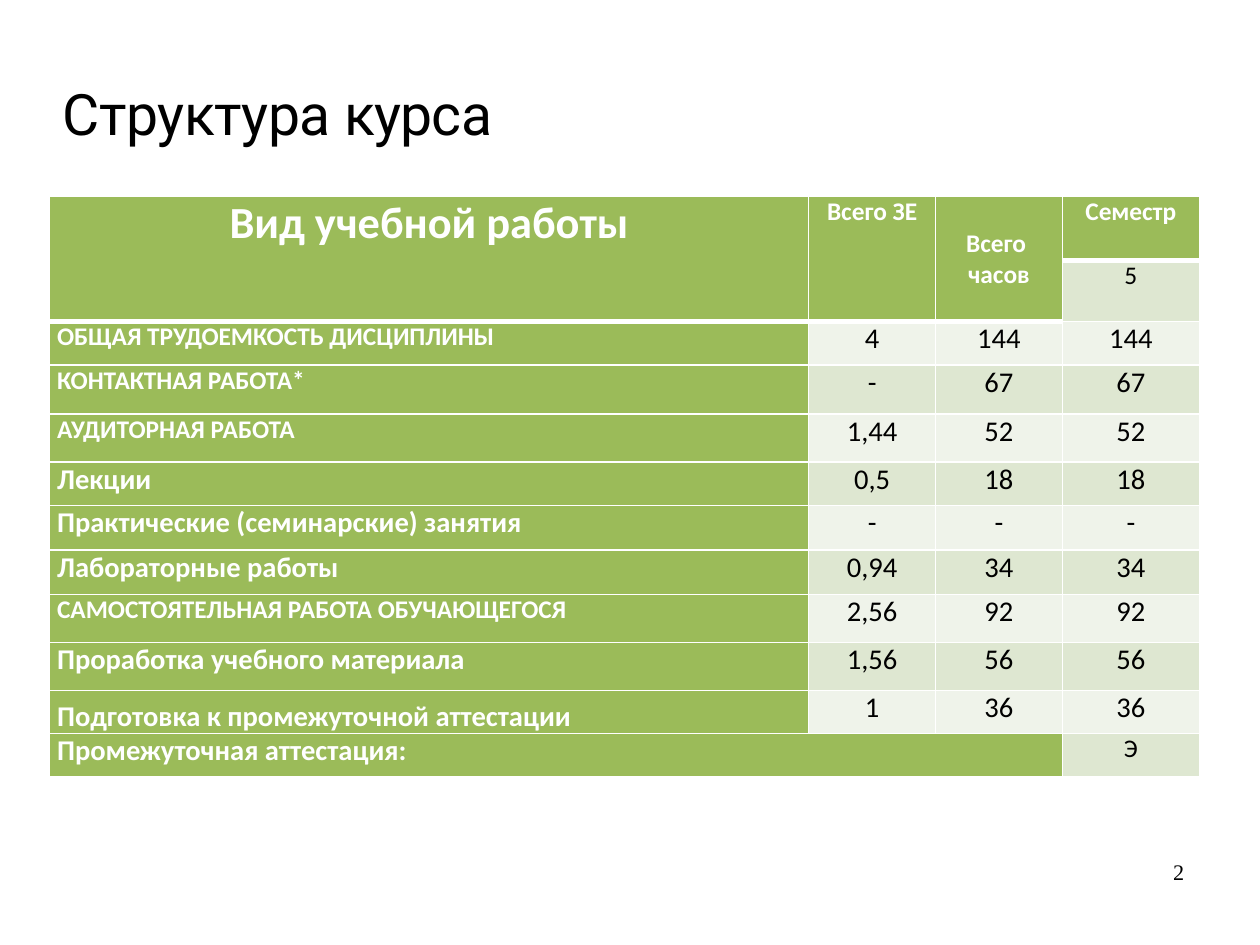
from pptx import Presentation
from pptx.dml.color import RGBColor
from pptx.enum.text import MSO_ANCHOR, PP_ALIGN
from pptx.oxml import parse_xml
from pptx.oxml.ns import nsdecls
from pptx.util import Inches, Pt

CENTER, LEFT, JUSTIFY = PP_ALIGN.CENTER, PP_ALIGN.LEFT, PP_ALIGN.JUSTIFY
MIDDLE = MSO_ANCHOR.MIDDLE
BLACK = RGBColor(0x00, 0x00, 0x00)
WHITE = RGBColor(0xFF, 0xFF, 0xFF)
GREEN = RGBColor(0x9B, 0xBB, 0x59)
BANDS = RGBColor(0xEF, 0xF3, 0xEA), RGBColor(0xDE, 0xE7, 0xD1)

COL_WIDTHS = [6.65, 1.11, 1.11, 1.2]
ROW_HEIGHTS = [0.56, 0.53, 0.38, 0.43, 0.42, 0.38, 0.39, 0.39, 0.42, 0.42, 0.37, 0.38]
HEADERS = [(["Вид учебной работы"], 28), (["Всего ЗЕ"], 16),
           (["Всего ", "часов"], 16), (["Семестр"], 16)]
WORKLOAD = [
    ("ОБЩАЯ ТРУДОЕМКОСТЬ ДИСЦИПЛИНЫ", "4", "144", "144"),
    ("КОНТАКТНАЯ РАБОТА*", "-", "67", "67"),
    ("АУДИТОРНАЯ РАБОТА", "1,44", "52", "52"),
    ("Лекции", "0,5", "18", "18"),
    ("Практические (семинарские) занятия", "-", "-", "-"),
    ("Лабораторные работы", "0,94", "34", "34"),
    ("САМОСТОЯТЕЛЬНАЯ РАБОТА ОБУЧАЮЩЕГОСЯ", "2,56", "92", "92"),
    ("Проработка учебного материала", "1,56", "56", "56"),
    ("Подготовка к промежуточной аттестации", "1", "36", "36"),
]


def add_run(p, text, size, font, color=BLACK, bold=False, spacing=0):
    """Append a styled run to a paragraph."""
    r = p.add_run()
    r.text = text
    r.font.size, r.font.name, r.font.bold = Pt(size), font, bold
    r.font.color.rgb = color
    if spacing:
        r.font._element.set("spc", str(spacing))


def add_text_box(slide, left, top, width, height):
    """Add a text box without insets and return its first paragraph."""
    tf = slide.shapes.add_textbox(
        Inches(left), Inches(top), Inches(width), Inches(height)).text_frame
    tf.margin_left = tf.margin_top = tf.margin_right = tf.margin_bottom = 0
    return tf.paragraphs[0]


def style_cell(cell, fill, heavy_top=False, heavy_bottom=False):
    """Set the insets, white borders and fill of a cell."""
    cell.margin_left = cell.margin_right = Inches(0.07)
    cell.margin_top = cell.margin_bottom = 0
    widths = {"L": 1, "R": 1, "T": 3 if heavy_top else 1, "B": 3 if heavy_bottom else 1}
    for side, width in widths.items():
        cell._tc.get_or_add_tcPr().append(parse_xml(
            f'<a:ln{side} {nsdecls("a")} w="{Pt(width)}"><a:solidFill>'
            f'<a:srgbClr val="{WHITE}"/></a:solidFill></a:ln{side}>'))
    cell.fill.solid()
    cell.fill.fore_color.rgb = fill


def write_cell(cell, lines, size, color=BLACK, bold=False, align=CENTER):
    """Write one paragraph per line into a cell."""
    tf = cell.text_frame
    for i, line in enumerate(lines):
        p = tf.add_paragraph() if i else tf.paragraphs[0]
        p.alignment = align
        add_run(p, line, size, "Calibri", color, bold)


def write_label(cell, text, align=LEFT):
    """Write a row label, smaller when it is in capitals."""
    write_cell(cell, [text], 16 if text.isupper() else 18, WHITE, True, align)


def add_workload_table(slide):
    """Add the table of course workload."""
    rows, cols = len(ROW_HEIGHTS), len(COL_WIDTHS)
    last_row, last_col = rows - 1, cols - 1
    table = slide.shapes.add_table(
        rows, cols, Inches(0.43), Inches(1.72),
        Inches(sum(COL_WIDTHS)), Inches(sum(ROW_HEIGHTS))).table
    table.first_row = table.horz_banding = False
    for column, width in zip(table.columns, COL_WIDTHS):
        column.width = Inches(width)
    for row, height in zip(table.rows, ROW_HEIGHTS):
        row.height = Inches(height)

    for r in range(rows):
        for c in range(cols):
            is_label = c == 0 or r == 0 or (r in (1, last_row) and c < last_col)
            header_end = 0 if c == last_col else 1
            style_cell(table.cell(r, c), GREEN if is_label else BANDS[r % 2],
                       r == header_end + 1, r == header_end)

    for c, (lines, size) in enumerate(HEADERS):
        if c < last_col:
            table.cell(0, c).merge(table.cell(1, c))
        write_cell(table.cell(0, c), lines, size, WHITE, True)
    table.cell(0, 2).vertical_anchor = MIDDLE
    write_cell(table.cell(1, last_col), ["5"], 16)

    for r, (label, *values) in enumerate(WORKLOAD, 2):
        write_label(table.cell(r, 0), label)
        for c, value in enumerate(values, 1):
            write_cell(table.cell(r, c), [value], 18)
    exam_prep = table.cell(last_row - 1, 0).text_frame.paragraphs[0]
    exam_prep.alignment = JUSTIFY
    exam_prep.line_spacing = 1.25

    table.cell(last_row, 0).merge(table.cell(last_row, last_col - 1))
    write_label(table.cell(last_row, 0), "Промежуточная аттестация:")
    write_cell(table.cell(last_row, last_col), ["Э"], 16)


def main():
    """Build the course structure slide."""
    prs = Presentation()
    prs.slide_width, prs.slide_height = Inches(11.03), Inches(8.27)
    slide = prs.slides.add_slide(prs.slide_layouts[6])

    p = add_text_box(slide, 0.55, 0.69, 3.8, 0.62)
    add_run(p, "Структура", 36, "Roboto", spacing=-30)
    add_run(p, " курса", 36, "Roboto", spacing=-50)

    add_workload_table(slide)

    p = add_text_box(slide, 10.27, 7.52, 0.24, 0.24)
    p.line_spacing = Pt(16.3)
    add_run(p, "2", 14, "Times New Roman")
    prs.save("out.pptx")


if __name__ == "__main__":
    main()
